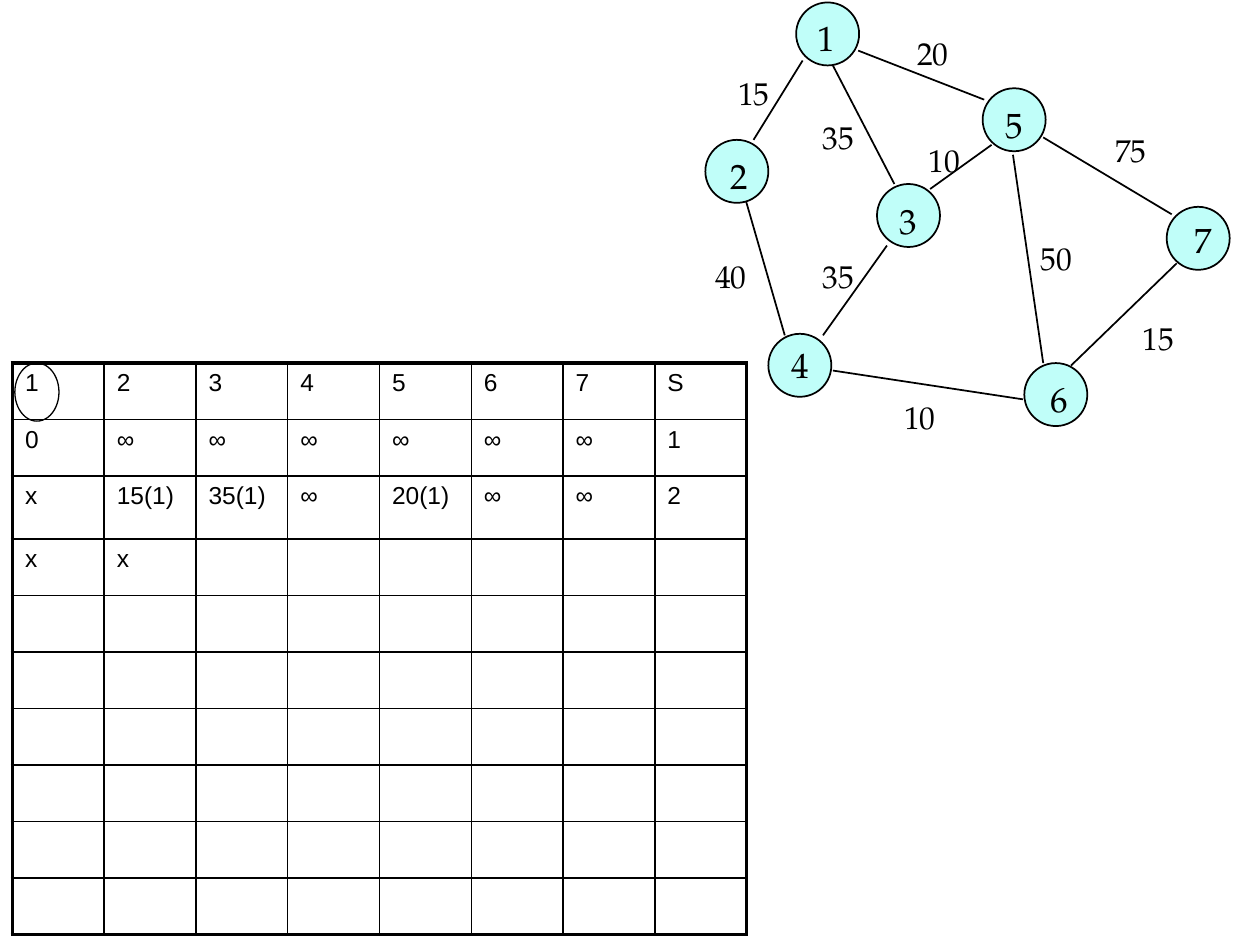
"""Build a slide with a weighted graph and its shortest-path table."""
import lxml.etree
import pptx
import pptx.dml.color
import pptx.enum.shapes
import pptx.enum.text
import pptx.oxml.ns
import pptx.util

Cm, Pt, qn = pptx.util.Cm, pptx.util.Pt, pptx.oxml.ns.qn


class Theme:
    ink = pptx.dml.color.RGBColor(0x00, 0x00, 0x00)
    node = pptx.dml.color.RGBColor(0xC0, 0xFE, 0xF9)
    thin, regular, thick = Pt(0.75), Pt(1), Pt(2.25)
    node_text = {"name": "TeX Gyre Pagella", "size": Pt(20)}
    weight_text = {"name": "TeX Gyre Pagella", "size": Pt(18)}
    cell_text = {"name": "Arial", "size": Pt(14)}


def write(frame, text, style):
    run = frame.paragraphs[0].add_run()
    run.text = text
    for key, value in style.items():
        setattr(run.font, key, value)
    run.font.color.rgb = Theme.ink


def add_label(shapes, text, position, size, style):
    frame = shapes.add_textbox(*map(Cm, position + size)).text_frame
    frame.word_wrap = False
    frame.auto_size = pptx.enum.text.MSO_AUTO_SIZE.SHAPE_TO_FIT_TEXT
    write(frame, text, style)


deck = pptx.Presentation()
deck.slide_width, deck.slide_height = Cm(25.4), Cm(19.05)
slide = deck.slides.add_slide(deck.slide_layouts[6])
graph = slide.shapes.add_group_shape().shapes

nodes = {
    "1": ((16.05, 0.05), (16.23, 0.2)),
    "2": ((14.22, 2.82), (14.48, 3)),
    "3": ((17.68, 3.71), (17.88, 3.89)),
    "4": ((15.49, 6.73), (15.7, 6.81)),
    "5": ((19.81, 1.78), (20.02, 1.96)),
    "6": ((20.65, 7.32), (20.93, 7.49)),
    "7": ((23.52, 4.17), (23.83, 4.29)),
}
edges = [
    ("20", (17.3, 1.02, 19.84, 2.01), (18.24, 0.56)),
    ("75", (21.03, 2.77, 23.62, 4.32), (22.23, 2.51)),
    ("15", (16.18, 1.22, 15.19, 2.82), (14.63, 1.37)),
    ("40", (15.04, 4.06, 15.82, 6.76), (14.17, 5.05)),
    ("10", (16.79, 7.47, 20.62, 8.05), (17.98, 7.9)),
    ("15", (21.59, 7.37, 23.72, 5.31), (22.78, 6.3)),
    ("35", (16.79, 1.32, 18.03, 3.71), (16.33, 2.26)),
    ("10", (19.99, 2.92, 18.75, 3.81), (18.47, 2.72)),
    ("35", (17.88, 4.95, 16.59, 6.76), (16.33, 5.05)),
    ("50", (20.42, 3.12, 21.03, 7.32), (20.73, 4.7)),
]

for corner, number_corner in nodes.values():
    circle = graph.add_shape(
        pptx.enum.shapes.MSO_SHAPE.OVAL, *map(Cm, corner + (1.27, 1.27)))
    circle.shadow.inherit = False
    circle.fill.solid()
    circle.fill.fore_color.rgb = Theme.node
    circle.line.color.rgb = Theme.ink
    circle.line.width = Theme.regular

for weight, ends, weight_corner in edges:
    edge = graph.add_connector(
        pptx.enum.shapes.MSO_CONNECTOR.STRAIGHT, *map(Cm, ends))
    edge.line.color.rgb = Theme.ink
    edge.line.width = Theme.regular
    lxml.etree.SubElement(edge._element.spPr, qn("a:effectLst"))
    add_label(graph, weight, weight_corner, (1.14, 1.02), Theme.weight_text)

for number, (corner, number_corner) in nodes.items():
    add_label(graph, number, number_corner, (0.86, 1.09), Theme.node_text)

steps = [
    ["1", "2", "3", "4", "5", "6", "7", "S"],
    ["0", "∞", "∞", "∞", "∞", "∞", "∞", "1"],
    ["x", "15(1)", "35(1)", "∞", "20(1)", "∞", "∞", "2"],
    ["x", "x"],
]
row_heights = [1.14, 1.14, 1.27] + [1.14] * 7
row_count, column_count = len(row_heights), len(steps[0])
distances = slide.shapes.add_table(
    row_count, column_count, Cm(0.25), Cm(7.32),
    Cm(1.85 * column_count), Cm(sum(row_heights))).table
distances.first_row = distances.horz_banding = False
for column in distances.columns:
    column.width = Cm(1.85)

for r, height in enumerate(row_heights):
    distances.rows[r].height = Cm(height)
    for c in range(column_count):
        cell = distances.cell(r, c)
        cell.fill.background()
        if r < len(steps) and c < len(steps[r]):
            write(cell.text_frame, steps[r][c], Theme.cell_text)
        outer_sides = {
            "a:lnL": c == 0,
            "a:lnR": c == column_count - 1,
            "a:lnT": r == 0,
            "a:lnB": r == row_count - 1,
        }
        properties = cell._tc.get_or_add_tcPr()
        for place, (side, is_outer) in enumerate(outer_sides.items()):
            border = lxml.etree.Element(qn(side))
            border.set("w", str(int(Theme.thick if is_outer else Theme.regular)))
            ink = lxml.etree.SubElement(border, qn("a:solidFill"))
            lxml.etree.SubElement(ink, qn("a:srgbClr")).set("val", str(Theme.ink))
            properties.insert(place, border)

start_mark = slide.shapes.add_shape(
    pptx.enum.shapes.MSO_SHAPE.OVAL, Cm(0.3), Cm(7.32), Cm(0.89), Cm(1.17))
start_mark.shadow.inherit = False
start_mark.fill.background()
start_mark.line.color.rgb = Theme.ink
start_mark.line.width = Theme.thin

deck.save("out.pptx")
